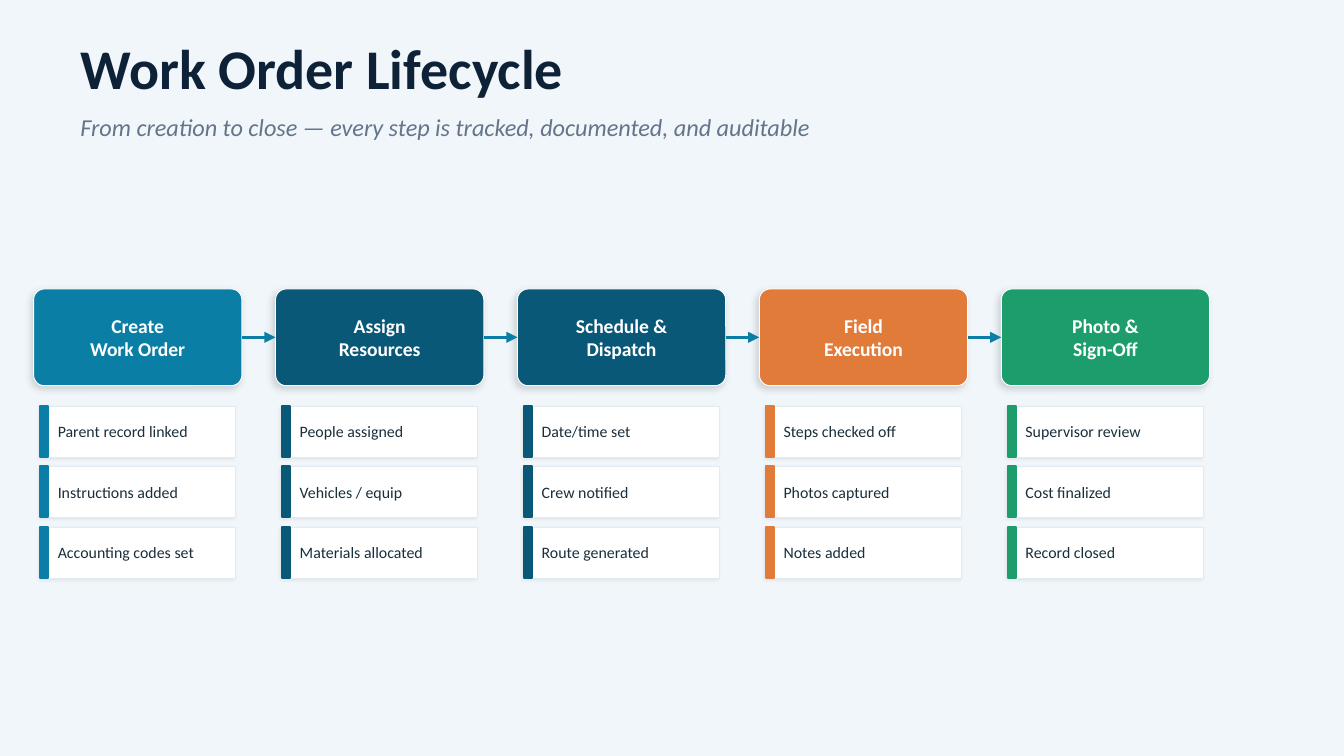
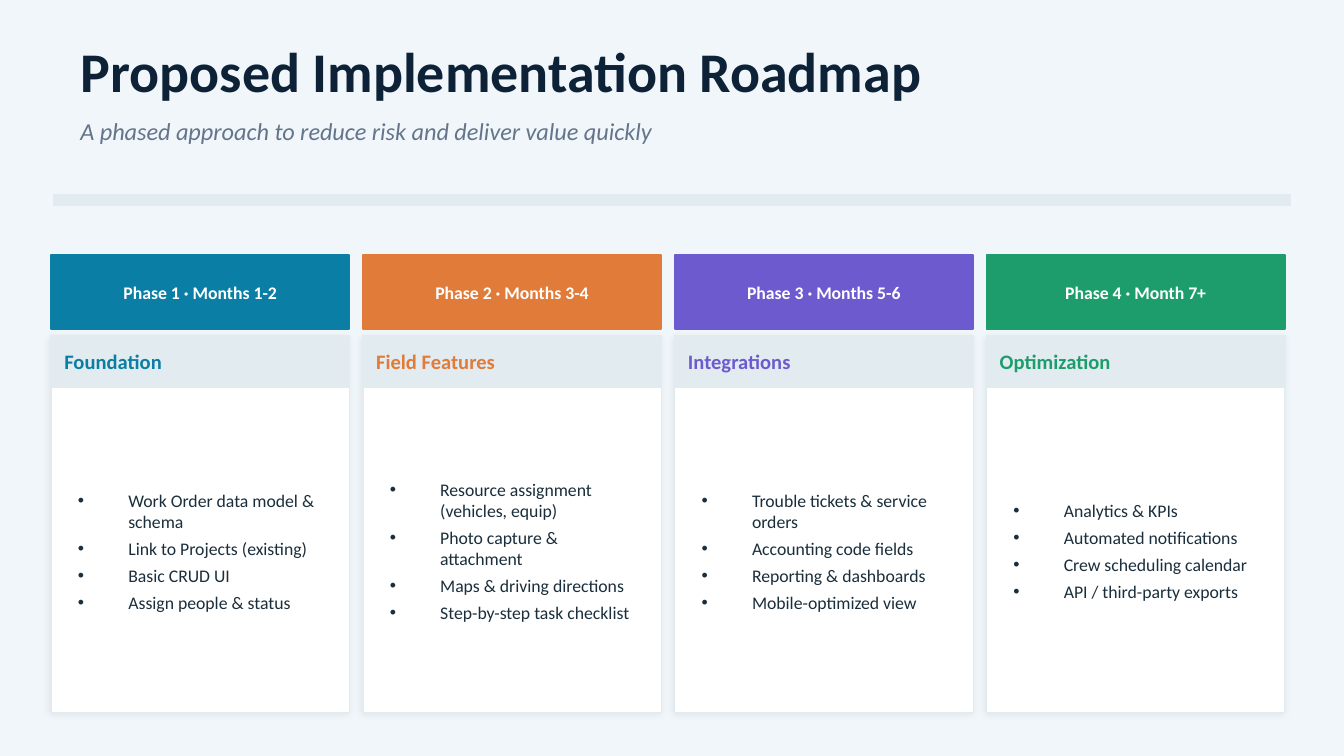
"""Build two slides: the work order lifecycle and the implementation roadmap."""
from dataclasses import dataclass

from lxml import etree
from pptx import Presentation
from pptx.dml.color import RGBColor
from pptx.enum.shapes import MSO_CONNECTOR, MSO_SHAPE
from pptx.enum.text import MSO_ANCHOR, MSO_AUTO_SIZE, PP_ALIGN
from pptx.oxml.ns import qn
from pptx.util import Inches, Pt

RECT, ROUNDED = MSO_SHAPE.RECTANGLE, MSO_SHAPE.ROUNDED_RECTANGLE
STRAIGHT = MSO_CONNECTOR.STRAIGHT
LEFT, CENTER = PP_ALIGN.LEFT, PP_ALIGN.CENTER
MIDDLE, FIXED = MSO_ANCHOR.MIDDLE, MSO_AUTO_SIZE.NONE
TITLE_ONLY, FOUR_BODIES = 5, 4


@dataclass(frozen=True)
class Theme:
    """Colours, font and type sizes of the deck."""
    font: str = "Calibri"
    ground: str = "F0F6FA"
    navy: str = "0D2137"
    slate: str = "64748B"
    ink: str = "1A2E3B"
    white: str = "FFFFFF"
    mist: str = "E2EBF0"
    teal: str = "0A7EA4"
    deep: str = "0A5878"
    orange: str = "E07B39"
    green: str = "1D9D6C"
    violet: str = "6D5ACF"
    title: float = 30
    subtitle: float = 13
    step: float = 10.5
    check: float = 8.5
    phase: float = 9.5
    stage: float = 11


@dataclass(frozen=True)
class Grid:
    """Equal columns, and equal rows below a top edge."""
    left: float
    width: float
    gap: float
    top: float = 0
    height: float = 0
    row_gap: float = 0

    def x(self, column):
        """Return the left edge of a column."""
        return self.left + column * (self.width + self.gap)

    def cell(self, column, row=0):
        """Return left, top, width and height of a cell."""
        top = self.top + row * (self.height + self.row_gap)
        return self.x(column), top, self.width, self.height


THEME = Theme()
WIDTH, HEIGHT = 10, 10 * 9 / 16
STEPS = Grid(left=0.25, width=1.55, gap=0.25, top=2.15, height=0.72)
CHECKS = Grid(left=0.3, width=1.45, gap=0.35, top=3.02, height=0.38, row_gap=0.07)
PHASES = Grid(left=0.38, width=2.22, gap=0.1, top=1.9, height=0.55)

LIFECYCLE = [
    (["Create", "Work Order"], THEME.teal,
     ["Parent record linked", "Instructions added", "Accounting codes set"]),
    (["Assign", "Resources"], THEME.deep,
     ["People assigned", "Vehicles / equip", "Materials allocated"]),
    (["Schedule &", "Dispatch"], THEME.deep,
     ["Date/time set", "Crew notified", "Route generated"]),
    (["Field", "Execution"], THEME.orange,
     ["Steps checked off", "Photos captured", "Notes added"]),
    (["Photo &", "Sign-Off"], THEME.green,
     ["Supervisor review", "Cost finalized", "Record closed"]),
]
ROADMAP = [
    ("Phase 1 · Months 1-2", "Foundation", THEME.teal,
     ["Work Order data model & schema", "Link to Projects (existing)",
      "Basic CRUD UI", "Assign people & status"]),
    ("Phase 2 · Months 3-4", "Field Features", THEME.orange,
     ["Resource assignment (vehicles, equip)", "Photo capture & attachment",
      "Maps & driving directions", "Step-by-step task checklist"]),
    ("Phase 3 · Months 5-6", "Integrations", THEME.violet,
     ["Trouble tickets & service orders", "Accounting code fields",
      "Reporting & dashboards", "Mobile-optimized view"]),
    ("Phase 4 · Month 7+", "Optimization", THEME.green,
     ["Analytics & KPIs", "Automated notifications",
      "Crew scheduling calendar", "API / third-party exports"]),
]


def rgb(code):
    """Turn a hex code into a colour."""
    return RGBColor.from_string(code)


def inches(*lengths):
    """Turn numbers into inch lengths."""
    return [Inches(length) for length in lengths]


def place(holder, box):
    """Move a placeholder to a box."""
    holder.left, holder.top, holder.width, holder.height = inches(*box)


def add_bullet(paragraph, indent=27):
    """Give a paragraph a hanging bullet."""
    props = paragraph._p.get_or_add_pPr()
    props.set("marL", str(Pt(indent)))
    props.set("indent", str(-Pt(indent)))
    etree.SubElement(props, qn("a:buChar")).set("char", "•")


def write(target, lines, *, size, color, bold=False, italic=False, align=LEFT,
          inset=(0.1, 0.05), bullets=False, after=0):
    """Fill a shape with formatted paragraphs."""
    frame = target.text_frame
    frame.word_wrap, frame.auto_size, frame.vertical_anchor = True, FIXED, MIDDLE
    side, edge = inches(*inset)
    frame.margin_left = frame.margin_right = side
    frame.margin_top = frame.margin_bottom = edge
    for number, line in enumerate(lines):
        paragraph = frame.add_paragraph() if number else frame.paragraphs[0]
        if bullets:
            add_bullet(paragraph)
        paragraph.alignment = align
        paragraph.space_before, paragraph.space_after = Pt(0), Pt(after)
        run = paragraph.add_run()
        run.text = line
        font = run.font
        font.name, font.size, font.color.rgb = THEME.font, Pt(size), rgb(color)
        font.bold, font.italic = bold, italic


def cast_shadow(panel, opacity, blur, distance):
    """Add a soft black shadow towards the lower left."""
    effects = panel.element.spPr.find(qn("a:effectLst"))
    shadow = etree.SubElement(effects, qn("a:outerShdw"), blurRad=str(Pt(blur)),
                              dist=str(Pt(distance)), dir=str(135 * 60000),
                              algn="bl", rotWithShape="0")
    black = etree.SubElement(shadow, qn("a:srgbClr"), val="000000")
    etree.SubElement(black, qn("a:alpha"), val=str(opacity * 1000))


def add_panel(slide, box, fill, *, kind=RECT, line=None, weight=1, shadow=None):
    """Draw a filled shape, outlined in its own colour by default."""
    panel = slide.shapes.add_shape(kind, *inches(*box))
    panel.shadow.inherit = False
    panel.fill.solid()
    panel.fill.fore_color.rgb = rgb(fill)
    panel.line.color.rgb = rgb(line or fill)
    panel.line.width = Pt(weight)
    if shadow:
        cast_shadow(panel, *shadow)
    return panel


def add_arrow(slide, start, end, y):
    """Draw a horizontal arrow."""
    arrow = slide.shapes.add_connector(STRAIGHT, *inches(start, y, end, y))
    arrow.line.color.rgb = rgb(THEME.teal)
    arrow.line.width = Pt(1.5)
    etree.SubElement(arrow.line._get_or_add_ln(), qn("a:tailEnd"), type="triangle")
    etree.SubElement(arrow.element.spPr, qn("a:effectLst"))


def add_headed_slide(deck, layout, title, subtitle, *, title_height, subtitle_top):
    """Add a slide with the shared ground, title and subtitle."""
    slide = deck.slides.add_slide(deck.slide_layouts[layout])
    slide.background.fill.solid()
    slide.background.fill.fore_color.rgb = rgb(THEME.ground)
    heading = slide.shapes.title
    place(heading, (0.5, 0.2, WIDTH - 1, title_height))
    write(heading, [title], size=THEME.title, color=THEME.navy, bold=True)
    tagline = slide.shapes.add_textbox(*inches(0.5, subtitle_top, WIDTH - 1, 0.38))
    write(tagline, [subtitle], size=THEME.subtitle, color=THEME.slate, italic=True)
    return slide


def add_step(slide, column, name, color):
    """Draw one lifecycle step."""
    step = add_panel(slide, STEPS.cell(column), color, kind=ROUNDED,
                     line=THEME.white, weight=0.5, shadow=(15, 4, 2))
    step.adjustments[0] = 0.08 / STEPS.height
    write(step, name, size=THEME.step, color=THEME.white, bold=True,
          align=CENTER, inset=(0.06, 0.06))


def add_check(slide, column, row, label, color):
    """Draw one check card with its accent bar."""
    left, top, width, height = CHECKS.cell(column, row)
    card = add_panel(slide, (left, top, width, height), THEME.white,
                     line=THEME.mist, weight=0.3, shadow=(8, 2, 1))
    write(card, [label], size=THEME.check, color=THEME.ink, inset=(0.13, 0))
    add_panel(slide, (left, top, 0.06, height), color)


def add_phase(slide, column, period, stage, color, tasks, task_list):
    """Draw one roadmap phase and set its task list on top."""
    left, _, width, _ = PHASES.cell(column)
    header = add_panel(slide, PHASES.cell(column), color)
    write(header, [period], size=THEME.phase, color=THEME.white, bold=True,
          align=CENTER)
    add_panel(slide, (left, 2.5, width, 2.8), THEME.white,
              line=THEME.mist, weight=0.4, shadow=(8, 4, 1))
    band = add_panel(slide, (left, 2.5, width, 0.38), THEME.mist)
    write(band, [stage], size=THEME.stage, color=color, bold=True, inset=(0.1, 0))
    place(task_list, (left + 0.1, 2.95, 2.05, 2.3))
    task_list.element.getparent().append(task_list.element)
    write(task_list, tasks, size=THEME.phase, color=THEME.ink, bullets=True, after=3)


def build_lifecycle(deck):
    """Build the work order lifecycle slide."""
    slide = add_headed_slide(
        deck, TITLE_ONLY, "Work Order Lifecycle",
        "From creation to close — every step is tracked, documented, and auditable",
        title_height=0.6, subtitle_top=0.75)
    for column, (name, color, checks) in enumerate(LIFECYCLE):
        add_step(slide, column, name, color)
        for row, label in enumerate(checks):
            add_check(slide, column, row, label, color)
    for column in range(1, len(LIFECYCLE)):
        start = STEPS.x(column)
        add_arrow(slide, start - STEPS.gap, start, STEPS.top + STEPS.height / 2)


def build_roadmap(deck):
    """Build the implementation roadmap slide."""
    slide = add_headed_slide(
        deck, FOUR_BODIES, "Proposed Implementation Roadmap",
        "A phased approach to reduce risk and deliver value quickly",
        title_height=0.65, subtitle_top=0.78)
    add_panel(slide, (0.4, 1.45, WIDTH - 0.8, 0.08), THEME.mist)
    task_lists = [slide.placeholders[number] for number in range(1, 5)]
    for column, (phase, task_list) in enumerate(zip(ROADMAP, task_lists)):
        add_phase(slide, column, *phase, task_list)


def main():
    """Build and save the deck."""
    deck = Presentation()
    deck.slide_width, deck.slide_height = inches(WIDTH, HEIGHT)
    build_lifecycle(deck)
    build_roadmap(deck)
    deck.save("out.pptx")


if __name__ == "__main__":
    main()
